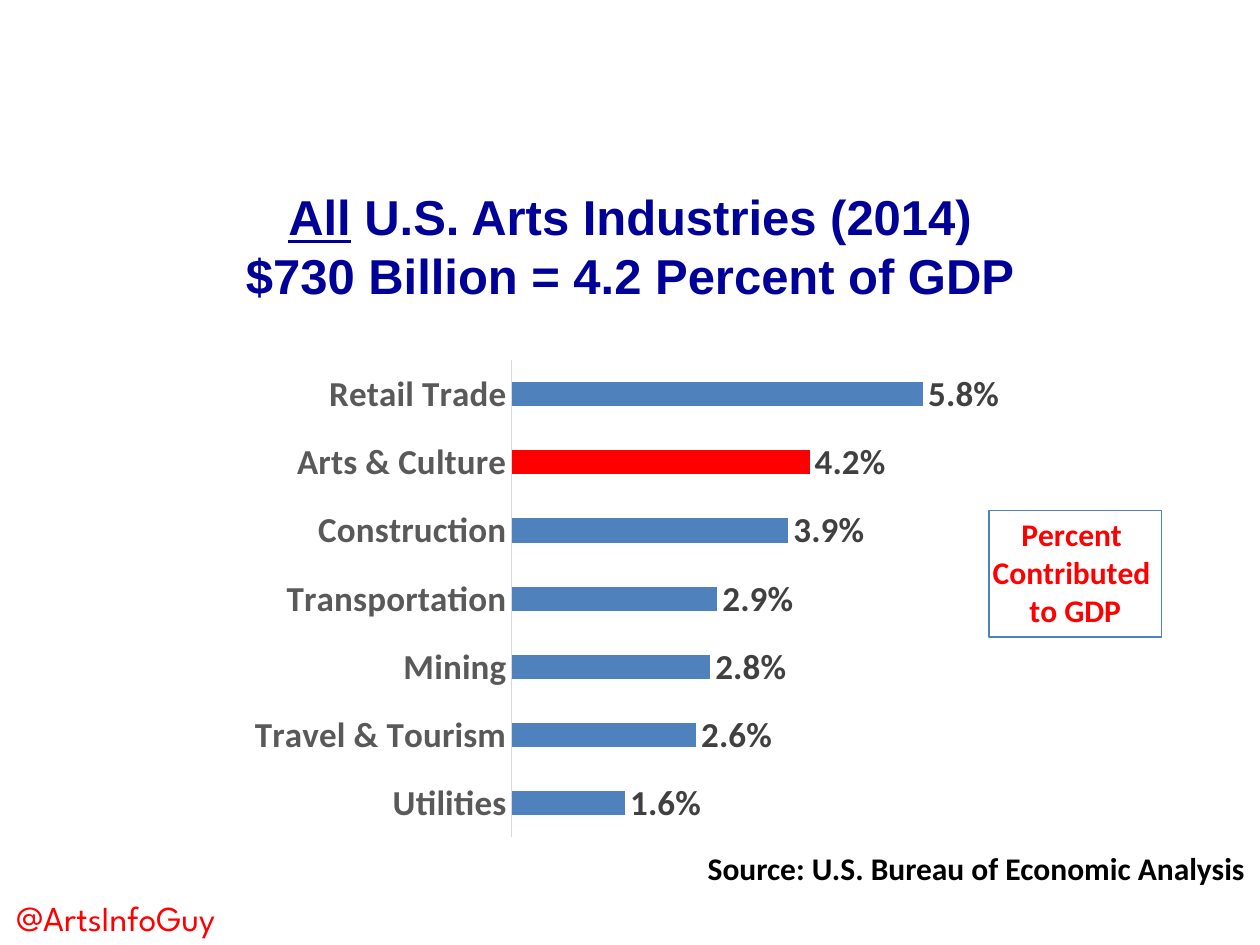
from dataclasses import dataclass

from lxml import etree
from pptx import Presentation
from pptx.chart.data import CategoryChartData
from pptx.dml.color import RGBColor
from pptx.enum import chart as ch, text
from pptx.oxml import ns
from pptx.util import Pt


@dataclass(frozen=True)
class Theme:
    navy: str = "000099"
    red: str = "FF0000"
    blue: str = "4F81BD"
    black: str = "000000"
    axis_text: str = "595959"
    label_text: str = "404040"
    axis_line: str = "D9D9D9"
    heading: str = "Arial"
    body: str = "Calibri"
    accent: str = "League Spartan"
    heading_size: float = 28
    label_size: float = 20
    note_size: float = 18


@dataclass(frozen=True)
class Box:
    left: float
    top: float
    width: float
    height: float

    def lengths(self) -> tuple:
        return tuple(Pt(v) for v in (self.left, self.top, self.width, self.height))


@dataclass(frozen=True)
class Note:
    wording: str
    box: Box
    face: str
    size: float
    color: str
    bold: bool
    align: text.PP_ALIGN
    anchor: text.MSO_ANCHOR


@dataclass(frozen=True)
class Industry:
    name: str
    share: float
    color: str


THEME = Theme()
INDUSTRIES = [
    Industry("Retail Trade", 0.058, THEME.blue),
    Industry("Arts & Culture", 0.042, THEME.red),
    Industry("Construction", 0.039, THEME.blue),
    Industry("Transportation", 0.029, THEME.blue),
    Industry("Mining", 0.028, THEME.blue),
    Industry("Travel & Tourism", 0.026, THEME.blue),
    Industry("Utilities", 0.016, THEME.blue),
]
NOTES = [
    Note("Source: U.S. Bureau of Economic Analysis", Box(395.3, 479.5, 323.3, 32.4),
         THEME.body, THEME.note_size, THEME.black, True,
         text.PP_ALIGN.RIGHT, text.MSO_ANCHOR.MIDDLE),
    Note("@ArtsInfoGuy", Box(2.2, 509, 154.8, 26.6),
         THEME.accent, THEME.label_size, THEME.red, False,
         text.PP_ALIGN.LEFT, text.MSO_ANCHOR.TOP),
]


def apply(target, values: dict) -> None:
    for name, value in values.items():
        setattr(target, name, value)


def style(font, face: str, size: float, color: str, bold: bool = True) -> None:
    apply(font, {"name": face, "size": Pt(size), "bold": bold})
    font.color.rgb = RGBColor.from_string(color)


def fill(target, color: str) -> None:
    target.format.fill.solid()
    target.format.fill.fore_color.rgb = RGBColor.from_string(color)


def outline(target, color: str) -> None:
    apply(target.format.line, {"width": Pt(0.75)})
    target.format.line.color.rgb = RGBColor.from_string(color)


def manual_layout(**places) -> etree._Element:
    layout = etree.Element(ns.qn("c:layout"))
    manual = etree.SubElement(layout, ns.qn("c:manualLayout"))
    for name, value in places.items():
        etree.SubElement(manual, ns.qn(f"c:{name}")).set("val", str(value))
    return layout


def drop_layout(parent) -> None:
    for old in parent.findall(ns.qn("c:layout")):
        parent.remove(old)


def add_heading(slide) -> None:
    heading = slide.shapes.title
    apply(heading, dict(zip(("left", "top", "width", "height"),
                            Box(0, 100.8, 720, 68.4).lengths())))
    frame = heading.text_frame
    apply(frame, {"word_wrap": True, "auto_size": text.MSO_AUTO_SIZE.NONE,
                  "vertical_anchor": text.MSO_ANCHOR.TOP, "margin_top": Pt(6)})
    line = frame.paragraphs[0]
    line.alignment = text.PP_ALIGN.CENTER
    for wording, underlined in (("All", True), (" U.S. Arts Industries (2014)", False),
                                ("$730 Billion = 4.2 Percent of GDP", False)):
        if wording.startswith("$"):
            line.add_line_break()
        run = line.add_run()
        run.text = wording
        style(run.font, THEME.heading, THEME.heading_size, THEME.navy)
        run.font.underline = underlined


def add_note(slide, note: Note) -> None:
    frame = slide.shapes.add_textbox(*note.box.lengths()).text_frame
    apply(frame, {"word_wrap": True, "vertical_anchor": note.anchor})
    line = frame.paragraphs[0]
    line.alignment = note.align
    run = line.add_run()
    run.text = note.wording
    style(run.font, note.face, note.size, note.color, note.bold)


def add_caption(chart) -> None:
    caption = chart.chart_title
    frame = caption.text_frame
    frame.text = "Percent \nContributed \nto GDP"
    for line in frame.paragraphs:
        line.alignment = text.PP_ALIGN.CENTER
        style(line.runs[0].font, THEME.body, THEME.note_size, THEME.red)
    outline(caption, THEME.blue)
    element = caption._element
    drop_layout(element)
    element.find(ns.qn("c:tx")).addnext(
        manual_layout(xMode="edge", yMode="edge", x=0.82, y=0.39))


def add_gdp_chart(slide) -> None:
    data = CategoryChartData(number_format="0.0%")
    data.categories = [industry.name for industry in INDUSTRIES]
    data.add_series("Series 1", [industry.share for industry in INDUSTRIES])
    chart = slide.shapes.add_chart(ch.XL_CHART_TYPE.BAR_CLUSTERED,
                                   *Box(108.7, 172.1, 556.6, 306.7).lengths(), data).chart
    chart.has_legend = False
    style(chart.font, THEME.body, 10, THEME.black, False)
    add_caption(chart)

    names = chart.category_axis
    apply(names, {"reverse_order": True, "has_major_gridlines": False,
                  "major_tick_mark": ch.XL_TICK_MARK.NONE,
                  "minor_tick_mark": ch.XL_TICK_MARK.NONE})
    style(names.tick_labels.font, THEME.body, THEME.label_size, THEME.axis_text)
    outline(names, THEME.axis_line)
    apply(chart.value_axis, {"visible": False, "has_major_gridlines": False,
                             "minimum_scale": 0, "maximum_scale": 0.07})

    plot = chart.plots[0]
    apply(plot, {"gap_width": 182, "vary_by_categories": False, "has_data_labels": True})
    apply(plot.data_labels, {"show_value": True, "number_format": "0.0%",
                             "number_format_is_linked": False,
                             "position": ch.XL_LABEL_POSITION.OUTSIDE_END})
    style(plot.data_labels.font, THEME.body, THEME.label_size, THEME.label_text)
    shares = plot.series[0]
    fill(shares, THEME.blue)
    for index, industry in enumerate(INDUSTRIES):
        if industry.color != THEME.blue:
            fill(shares.points[index], industry.color)

    area = chart._chartSpace.find(".//" + ns.qn("c:plotArea"))
    drop_layout(area)
    area.insert(0, manual_layout(layoutTarget="inner", xMode="edge", yMode="edge",
                                 x=0.33, y=0.11, w=0.51, h=0.89))


def main() -> None:
    deck = Presentation()
    apply(deck, {"slide_width": Pt(720), "slide_height": Pt(540)})
    slide = deck.slides.add_slide(deck.slide_layouts[5])
    add_heading(slide)
    add_gdp_chart(slide)
    for note in NOTES:
        add_note(slide, note)
    deck.save("out.pptx")


if __name__ == "__main__":
    main()
